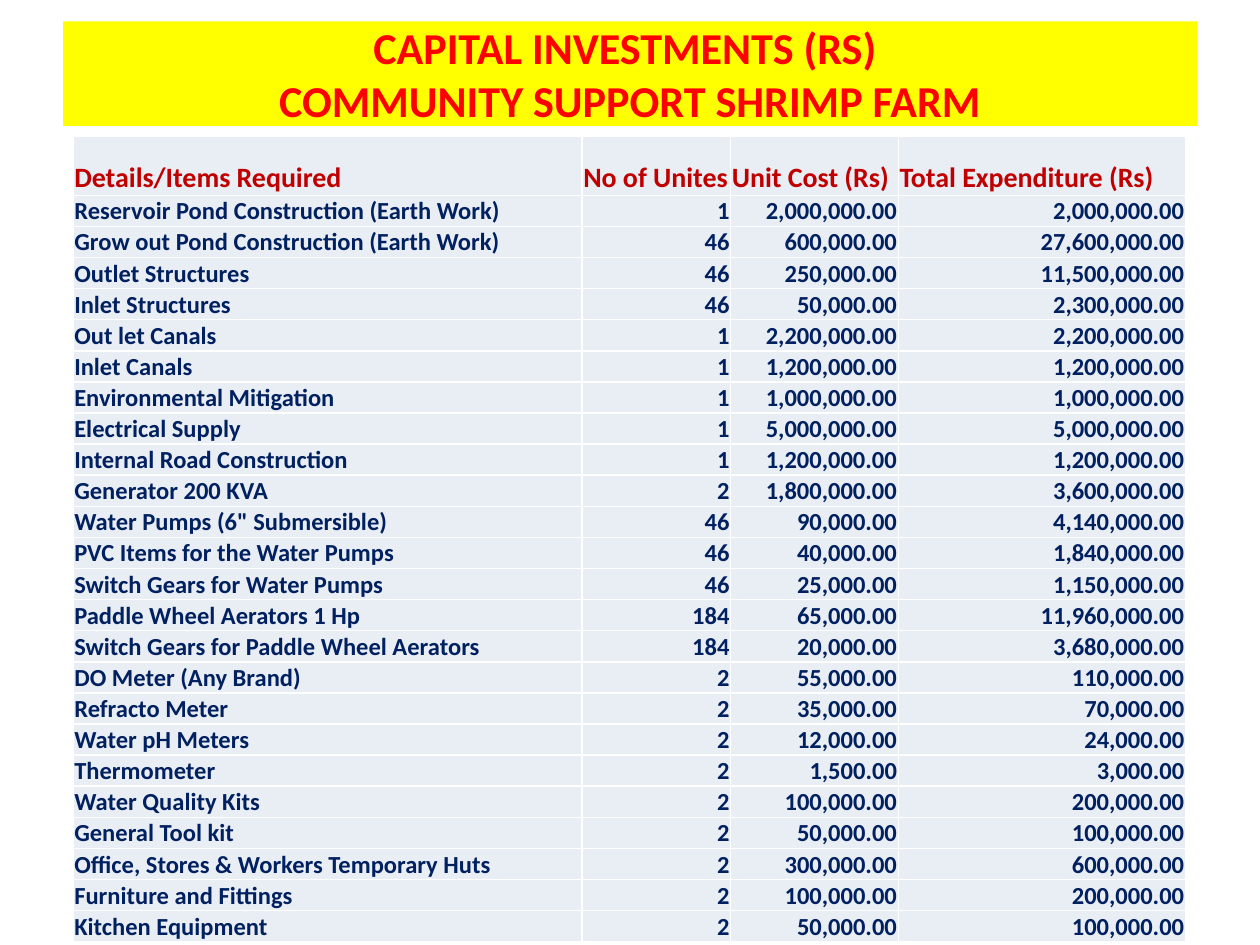
from lxml import etree
from pptx import Presentation
from pptx import util as u
from pptx.dml.color import RGBColor
from pptx.enum import text
from pptx.oxml.ns import qn

Inches, Pt = u.Inches, u.Pt
COLORS = {"banner": "FFFF00", "title": "FF0000", "header": "C00000",
          "body": "002060", "cell": "E9EDF4", "border": "FFFFFF"}
HEADERS = ["Details/Items Required", "No of Unites", "Unit Cost (Rs)",
           "Total Expenditure (Rs)"]
ITEMS = [
    ("Reservoir Pond Construction (Earth Work)", 1, 2000000),
    ("Grow out Pond Construction (Earth Work)", 46, 600000),
    ("Outlet Structures", 46, 250000),
    ("Inlet Structures", 46, 50000),
    ("Out let Canals", 1, 2200000),
    ("Inlet Canals", 1, 1200000),
    ("Environmental Mitigation", 1, 1000000),
    ("Electrical Supply", 1, 5000000),
    ("Internal Road Construction", 1, 1200000),
    ("Generator 200 KVA", 2, 1800000),
    ('Water Pumps (6" Submersible)', 46, 90000),
    ("PVC Items for the Water Pumps", 46, 40000),
    ("Switch Gears for Water Pumps", 46, 25000),
    ("Paddle Wheel Aerators 1 Hp", 184, 65000),
    ("Switch Gears for Paddle Wheel Aerators", 184, 20000),
    ("DO Meter (Any Brand)", 2, 55000),
    ("Refracto Meter", 2, 35000),
    ("Water pH Meters", 2, 12000),
    ("Thermometer", 2, 1500),
    ("Water Quality Kits", 2, 100000),
    ("General Tool kit", 2, 50000),
    ("Office, Stores & Workers Temporary Huts", 2, 300000),
    ("Furniture and Fittings", 2, 100000),
    ("Kitchen Equipment", 2, 50000),
]
COL_WIDTHS = [4.04, 1.18, 1.33, 2.28]
HEADER_HEIGHT, ROW_HEIGHT = 0.47, 0.24
CELL_FORMAT = {"margin_left": Inches(0.01), "margin_right": Inches(0.01),
               "margin_top": Inches(0.01), "margin_bottom": 0,
               "vertical_anchor": text.MSO_ANCHOR.BOTTOM}


def rgb(name):
    return RGBColor.from_string(COLORS[name])


def set_attrs(obj, values):
    for name, value in values.items():
        setattr(obj, name, value)


def set_fill(obj, color):
    obj.fill.solid()
    obj.fill.fore_color.rgb = rgb(color)


def set_font(p, size, color):
    for r in p.runs:
        set_attrs(r.font, {"name": "Calibri", "size": Pt(size), "bold": True})
        r.font.color.rgb = rgb(color)


def set_borders(cell):
    tcPr = cell._tc.get_or_add_tcPr()
    for i, side in enumerate(("lnL", "lnR", "lnT", "lnB")):
        ln = etree.Element(qn(f"a:{side}"), w=str(Pt(1)))
        fill = etree.SubElement(ln, qn("a:solidFill"))
        etree.SubElement(fill, qn("a:srgbClr"), val=COLORS["border"])
        tcPr.insert(i, ln)


def add_title(s, left, top, width, height):
    sp = s.shapes.title
    set_attrs(sp, {"left": Inches(left), "top": Inches(top),
                   "width": Inches(width), "height": Inches(height)})
    set_fill(sp, "banner")
    tf = sp.text_frame
    set_attrs(tf, {"word_wrap": True, "auto_size": text.MSO_AUTO_SIZE.NONE,
                   "vertical_anchor": text.MSO_ANCHOR.MIDDLE})
    p = tf.paragraphs[0]
    p.text = "CAPITAL INVESTMENTS (RS) \vCOMMUNITY SUPPORT SHRIMP FARM"
    p.alignment = text.PP_ALIGN.CENTER
    set_font(p, 25.2, "title")


def fill_cell(cell, value, size, color, align):
    set_attrs(cell, CELL_FORMAT)
    set_fill(cell, "cell")
    set_borders(cell)
    p = cell.text_frame.paragraphs[0]
    p.text = value
    p.alignment = align
    set_font(p, size, color)


def add_cost_table(s, left, top):
    rows = [HEADERS] + [(item, str(units), f"{cost:,.2f}", f"{units * cost:,.2f}")
                        for item, units, cost in ITEMS]
    heights = [HEADER_HEIGHT] + [ROW_HEIGHT] * len(ITEMS)
    table = s.shapes.add_table(len(rows), len(HEADERS), Inches(left), Inches(top),
                               Inches(sum(COL_WIDTHS)), Inches(sum(heights))).table
    set_attrs(table, {"first_row": False, "horz_banding": False})
    for column, width in zip(table.columns, COL_WIDTHS):
        column.width = Inches(width)
    for i, (values, height) in enumerate(zip(rows, heights)):
        table.rows[i].height = Inches(height)
        size, color = (14, "body") if i else (16, "header")
        for j, value in enumerate(values):
            align = text.PP_ALIGN.RIGHT if i and j else text.PP_ALIGN.LEFT
            fill_cell(table.cell(i, j), value, size, color, align)


def main():
    prs = Presentation()
    set_attrs(prs, {"slide_width": Inches(10), "slide_height": Inches(7.5)})
    s = prs.slides.add_slide(prs.slide_layouts[5])
    add_title(s, 0.5, 0.17, 9, 0.83)
    add_cost_table(s, 0.58, 1.08)
    prs.save("out.pptx")


if __name__ == "__main__":
    main()
